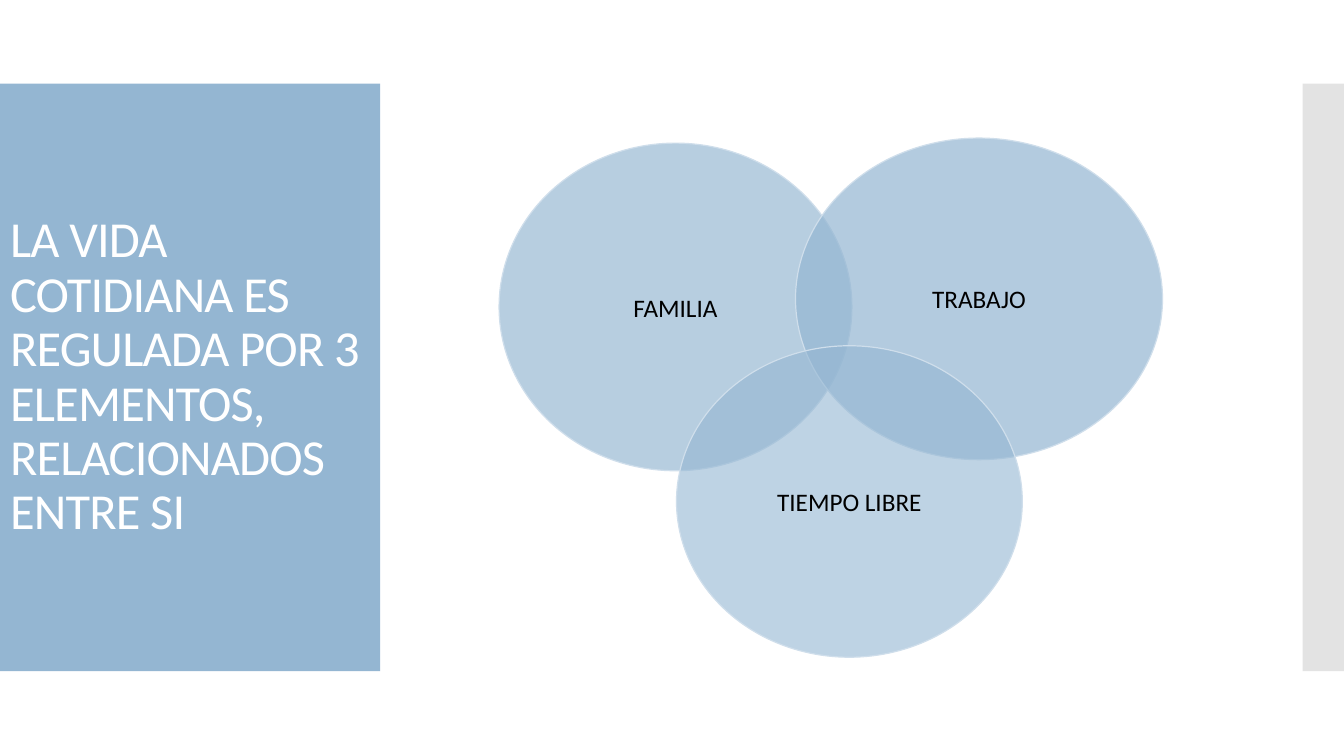
from pptx import Presentation
from pptx.dml.color import RGBColor
from pptx.enum import shapes, text
from pptx.oxml import ns
from pptx.util import Inches, Pt
from lxml import etree

TITLE = "LA VIDA COTIDIANA ES REGULADA POR 3 ELEMENTOS, RELACIONADOS ENTRE SI"
TITLE_BOX = (0, 1.23, 3.68, 5.03)
BLUE, GREY, EDGE, WHITE, BLACK = "94B6D2", "C8C8C8", "CFDEEB", "FFFFFF", "000000"
BANDS = [
    ((0, 0.83, 3.77, 5.83), BLUE, 100),
    ((12.92, 0.83, 0.42, 5.83), GREY, 50),
]
CIRCLES = [
    ("FAMILIA", (4.95, 1.42, 3.5, 3.25), 67),
    ("TRABAJO", (7.89, 1.37, 3.64, 3.19), 70),
    ("TIEMPO LIBRE", (6.71, 3.43, 3.43, 3.09), 60),
]


def color(value):
    return RGBColor.from_string(value)


def add_filled(s, kind, box, fill, opacity):
    sp = s.shapes.add_shape(kind, *map(Inches, box))
    sp.shadow.inherit = False
    sp.fill.solid()
    sp.fill.fore_color.rgb = color(fill)
    sp.line.fill.background()
    if opacity < 100:
        clr = sp.fill._xPr.find(".//" + ns.qn("a:srgbClr"))
        etree.SubElement(clr, ns.qn("a:alpha"), val=str(opacity * 1000))
    return sp


def write(sp, words, size, ink, align):
    tf = sp.text_frame
    frame = {
        "word_wrap": True,
        "auto_size": text.MSO_AUTO_SIZE.NONE,
        "vertical_anchor": text.MSO_ANCHOR.MIDDLE,
    }
    for name, value in frame.items():
        setattr(tf, name, value)
    p = tf.paragraphs[0]
    p.alignment = align
    r = p.add_run()
    r.text = words
    for name, value in {"name": "Calibri", "size": Pt(size), "bold": False}.items():
        setattr(r.font, name, value)
    r.font.color.rgb = color(ink)
    return p, r


def main():
    prs = Presentation()
    prs.slide_width, prs.slide_height = Inches(13.33), Inches(7.5)
    s = prs.slides.add_slide(prs.slide_layouts[5])

    for box, fill, opacity in BANDS:
        add_filled(s, shapes.MSO_SHAPE.RECTANGLE, box, fill, opacity)

    for label, box, opacity in CIRCLES:
        sp = add_filled(s, shapes.MSO_SHAPE.OVAL, box, BLUE, opacity)
        sp.line.color.rgb = color(EDGE)
        sp.line.width = Pt(0.85)
        write(sp, label, 18, BLACK, text.PP_ALIGN.CENTER)

    title = s.shapes.title
    for name, value in zip(("left", "top", "width", "height"), TITLE_BOX):
        setattr(title, name, Inches(value))
    p, r = write(title, TITLE, 36, WHITE, text.PP_ALIGN.LEFT)
    p.line_spacing = 0.9
    r.font._element.set("spc", "-60")
    s.shapes._spTree.append(title._element)

    prs.save("out.pptx")


if __name__ == "__main__":
    main()
